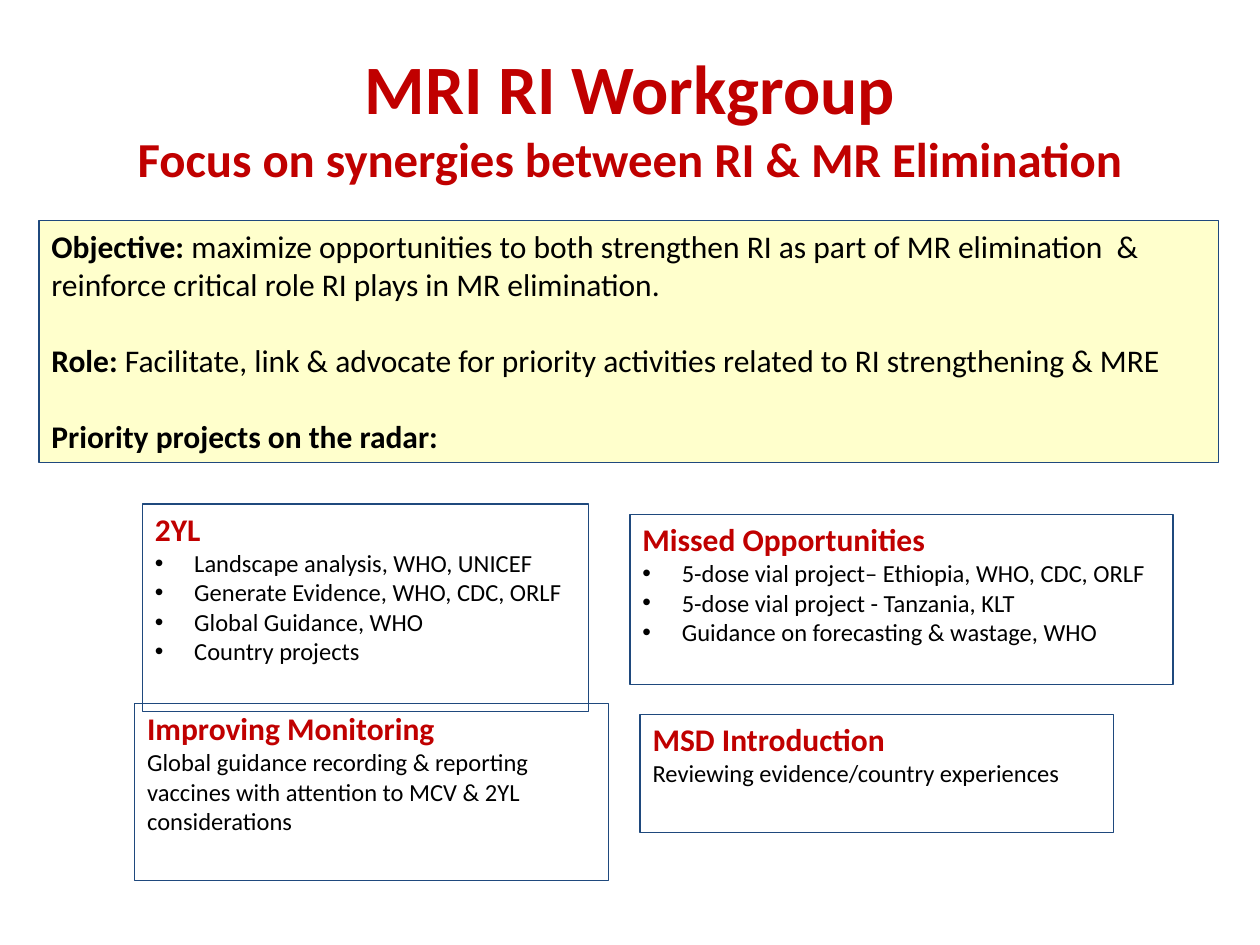
from pptx import Presentation
from pptx.dml.color import RGBColor
from pptx.enum.shapes import MSO_SHAPE
from pptx.enum.text import MSO_ANCHOR, PP_ALIGN
from pptx.oxml.ns import qn
from pptx.util import Pt
from lxml import etree

RECTANGLE = MSO_SHAPE.RECTANGLE
TOP, MIDDLE = MSO_ANCHOR.TOP, MSO_ANCHOR.MIDDLE
LEFT, CENTER = PP_ALIGN.LEFT, PP_ALIGN.CENTER
FONT = "Calibri"
RED, BLACK, NAVY, CREAM = "C00000", "000000", "1F497D", "FFFFCC"
HEADING_SIZE, BODY_SIZE = 18, 14
BULLET_INDENT = 22.5

OBJECTIVES = [
    ("Objective:", " maximize opportunities to both strengthen RI as part of MR "
     "elimination  & reinforce critical role RI plays in MR elimination."),
    ("Role:", " Facilitate, link & advocate for priority activities related to "
     "RI strengthening & MRE"),
    ("Priority projects on the radar:", ""),
]

# Position and size, heading, body lines, bulleted or not
PROJECTS = [
    ((81.4, 288, 254.9, 118.8), "2YL",
     ["Landscape analysis, WHO, UNICEF", "Generate Evidence, WHO, CDC, ORLF",
      "Global Guidance, WHO", "Country projects"], True),
    ((360, 293.8, 310.3, 97.2), "Missed Opportunities",
     ["5-dose vial project– Ethiopia, WHO, CDC, ORLF",
      "5-dose vial project - Tanzania, KLT",
      "Guidance on forecasting & wastage, WHO"], True),
    ((77, 401.8, 270.7, 101.5), "Improving Monitoring",
     ["Global guidance recording & reporting vaccines with attention to "
      "MCV & 2YL considerations"], False),
    ((365.8, 408.2, 270.7, 67.7), "MSD Introduction",
     ["Reviewing evidence/country experiences"], False),
]


def color(hex_value):
    return RGBColor.from_string(hex_value)


def set_font(font, size, hex_value, bold=None):
    font.name = FONT
    font.size = Pt(size)
    font.color.rgb = color(hex_value)
    font.bold = bold


def add_span(para, text, bold):
    span = para.add_run()
    span.text = text
    span.font.bold = bold
    return span


def add_box(slide, place, fill=None):
    box = slide.shapes.add_shape(RECTANGLE, *map(Pt, place))
    box.shadow.inherit = False
    if fill:
        box.fill.solid()
        box.fill.fore_color.rgb = color(fill)
    else:
        box.fill.background()
    box.line.color.rgb = color(NAVY)
    box.line.width = Pt(0.75)
    box.text_frame.word_wrap = True
    box.text_frame.vertical_anchor = TOP
    return box.text_frame


def add_bullet(para):
    properties = para._p.get_or_add_pPr()
    properties.set("marL", str(Pt(BULLET_INDENT)))
    properties.set("indent", str(-Pt(BULLET_INDENT)))
    etree.SubElement(properties, qn("a:buFont")).set("typeface", "Arial")
    etree.SubElement(properties, qn("a:buChar")).set("char", "•")


def add_title(slide):
    box = slide.shapes.add_textbox(Pt(36), Pt(21.6), Pt(648), Pt(90))
    frame = box.text_frame
    frame.word_wrap = True
    frame.vertical_anchor = MIDDLE
    para = frame.paragraphs[0]
    para.alignment = CENTER
    set_font(para.font, 39.6, RED, True)
    add_span(para, "MRI RI Workgroup", True)
    para.add_line_break()
    subtitle = add_span(para, "Focus on synergies between RI & MR Elimination", True)
    subtitle.font.size = Pt(27.9)


def add_objectives(slide):
    frame = add_box(slide, (22.3, 126, 673.9, 138.2), CREAM)
    for index, (label, detail) in enumerate(OBJECTIVES):
        para = frame.add_paragraph() if index else frame.paragraphs[0]
        para.alignment = LEFT
        para.space_before = Pt(22 if index else 0)
        set_font(para.font, HEADING_SIZE, BLACK)
        add_span(para, label, True)
        if detail:
            add_span(para, detail, False)


def add_project(slide, place, heading, lines, bulleted):
    frame = add_box(slide, place)
    para = frame.paragraphs[0]
    para.text = heading
    para.alignment = LEFT
    set_font(para.font, HEADING_SIZE, RED, True)
    for line in lines:
        para = frame.add_paragraph()
        para.text = line
        para.alignment = LEFT
        if bulleted:
            add_bullet(para)
        set_font(para.font, BODY_SIZE, BLACK, False)


def main():
    deck = Presentation()
    deck.slide_width, deck.slide_height = Pt(720), Pt(540)
    page = deck.slides.add_slide(deck.slide_layouts[6])

    # Purpose of the workgroup
    add_objectives(page)

    # Priority projects
    for project in PROJECTS:
        add_project(page, *project)

    # Title on top
    add_title(page)
    deck.save("out.pptx")


if __name__ == "__main__":
    main()
